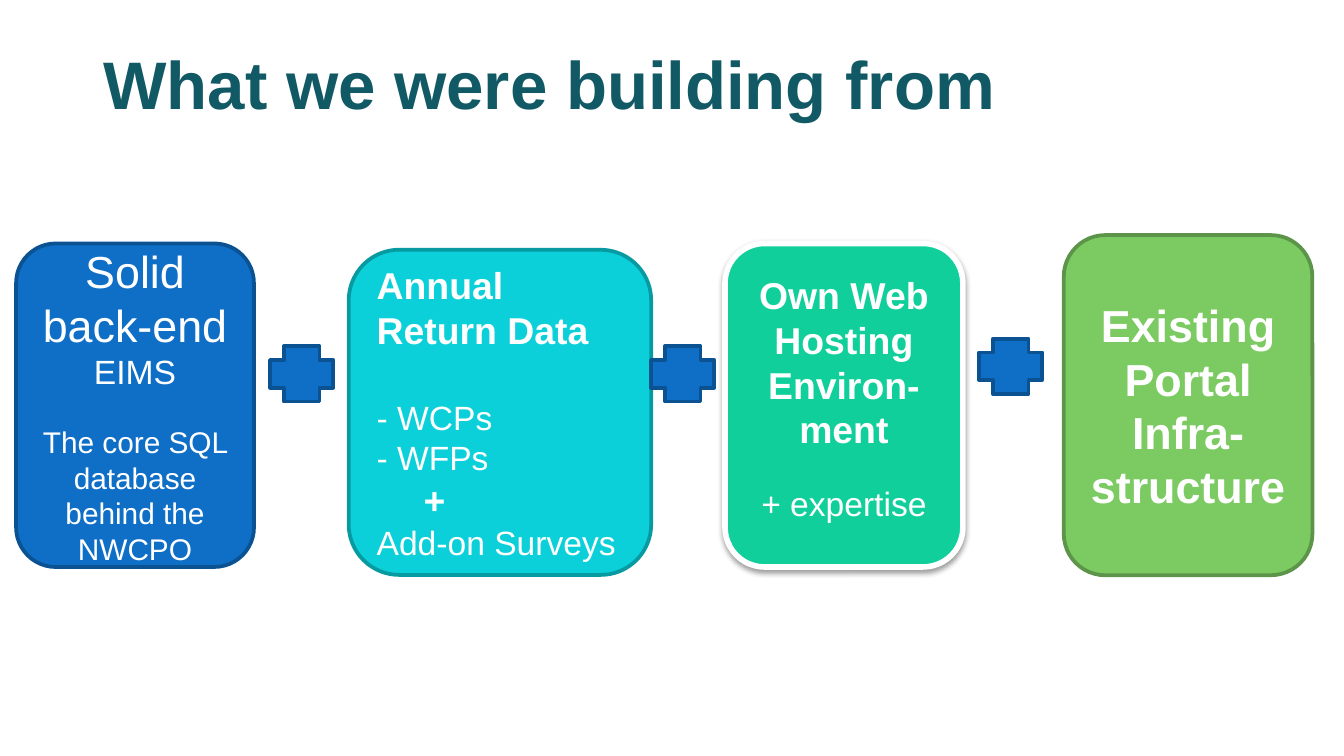
from lxml import etree
from pptx import Presentation
from pptx import util as u
from pptx.dml.color import RGBColor
from pptx.enum import shapes, text
from pptx.oxml import ns

WIDTH = u.Inches(10)
HEIGHT = WIDTH * 9 // 16
COLOURS = {
    "title": "115964",
    "white": "FFFFFF",
    "blue": "0F6FC6",
    "blue edge": "0B5292",
    "cyan": "0BD0D9",
    "cyan edge": "089AA1",
    "mint": "10CF9B",
    "green": "7CCA62",
    "green edge": "5C9549",
    "shade": "000000",
}
CENTRE, LEFT = text.PP_ALIGN.CENTER, text.PP_ALIGN.LEFT
SQUARE = {"left": 1.2, "top": 32.2, "width": 17.7, "height": 42.8}
BLOCKS = [
    {
        "area": SQUARE, "fill": "blue", "edge": "blue edge", "align": CENTRE,
        "lines": [
            ("Solid back-end", 24, False, {}),
            ("EIMS", 18, False, {}),
            ("The core SQL database behind the NWCPO", 16, False, {"space_before": u.Pt(17)}),
        ],
    },
    {
        "area": {"left": 25.95, "top": 33.05, "width": 22.5, "height": 43},
        "fill": "cyan", "edge": "cyan edge", "align": LEFT,
        "lines": [
            ("Annual Return Data", 20, True, {}),
            ("- WCPs", 18, False, {"space_before": u.Pt(24)}),
            ("- WFPs", 18, False, {}),
            ("+", 20, True, {"indent": u.Inches(0.35)}),
            ("Add-on Surveys", 18, False, {}),
        ],
    },
    {
        "area": {"left": 79.15, "top": 31.1, "width": 18.5, "height": 45},
        "fill": "green", "edge": "green edge", "align": CENTRE,
        "lines": [("Existing Portal Infra-structure", 24, True, {})],
    },
    {
        "area": {**SQUARE, "left": 53.95}, "fill": "mint", "edge": "white",
        "edge_width": 3, "bottom": 0.16, "shaded": True, "align": CENTRE,
        "lines": [
            ("Own Web Hosting Environ-ment", 20, True, {}),
            ("+ expertise", 18, False, {"space_before": u.Pt(17)}),
        ],
    },
]
PLUS_SPOTS = [(20.1, 45.8), (48.45, 45.8), (72.85, 44.8)]


def colour(name):
    return RGBColor.from_string(COLOURS[name])


def apply(target, values):
    for key, value in values.items():
        setattr(target, key, value)


def place(left, top, width, height):
    return [int(share * size / 100) for share, size in
            ((left, WIDTH), (top, HEIGHT), (width, WIDTH), (height, HEIGHT))]


def style_font(font, size, bold, tint):
    apply(font, {"name": "Arial", "size": u.Pt(size), "bold": bold})
    font.color.rgb = colour(tint)


def add_title(slide, wording):
    heading = slide.shapes.title
    spot = place(6.7, 6.3, 90, 9.3)
    apply(heading, dict(zip(("left", "top", "width", "height"), spot)))
    frame = heading.text_frame
    frame.text = wording
    apply(frame, {"word_wrap": True, "auto_size": text.MSO_AUTO_SIZE.NONE,
                  "vertical_anchor": text.MSO_ANCHOR.MIDDLE})
    frame.paragraphs[0].alignment = LEFT
    style_font(frame.paragraphs[0].runs[0].font, 36, True, "title")


def add_figure(slide, kind, area, fill, edge, edge_width=2):
    figure = slide.shapes.add_shape(kind, *place(**area))
    figure.shadow.inherit = False
    figure.fill.solid()
    figure.fill.fore_color.rgb = colour(fill)
    figure.line.color.rgb = colour(edge)
    figure.line.width = u.Pt(edge_width)
    return figure


def add_shade(figure):
    effects = figure.element.spPr.find(ns.qn("a:effectLst"))
    shade = etree.SubElement(effects, ns.qn("a:outerShdw"), blurRad=str(u.Pt(3.1)),
                             dist=str(u.Pt(1.6)), dir="5400000", rotWithShape="0")
    tint = etree.SubElement(shade, ns.qn("a:srgbClr"), val=COLOURS["shade"])
    etree.SubElement(tint, ns.qn("a:alpha"), val="38000")


def write_lines(frame, lines, align):
    for number, (wording, size, bold, layout) in enumerate(lines):
        line = frame.add_paragraph() if number else frame.paragraphs[0]
        line.text = wording
        values = {"alignment": align, **layout}
        indent = values.pop("indent", None)
        if indent:
            line._p.get_or_add_pPr().set("marL", str(indent))
        apply(line, values)
        style_font(line.runs[0].font, size, bold, "white")


def add_block(slide, area, fill, edge, align, lines, edge_width=2, bottom=0.05, shaded=False):
    block = add_figure(slide, shapes.MSO_SHAPE.ROUNDED_RECTANGLE, area, fill, edge, edge_width)
    if shaded:
        add_shade(block)
    apply(block.text_frame, {"word_wrap": True, "margin_bottom": u.Inches(bottom),
                             "vertical_anchor": text.MSO_ANCHOR.MIDDLE})
    write_lines(block.text_frame, lines, align)


def add_plus(slide, left, top):
    area = {"left": left, "top": top, "width": 4.7, "height": 7.3}
    add_figure(slide, shapes.MSO_SHAPE.CROSS, area, "blue", "blue edge")


def main():
    deck = Presentation()
    apply(deck, {"slide_width": WIDTH, "slide_height": HEIGHT})
    slide = deck.slides.add_slide(deck.slide_layouts.get_by_name("Title Only"))
    add_title(slide, "What we were building from")
    for block in BLOCKS:
        add_block(slide, **block)
    for spot in PLUS_SPOTS:
        add_plus(slide, *spot)
    deck.save("out.pptx")


if __name__ == "__main__":
    main()
